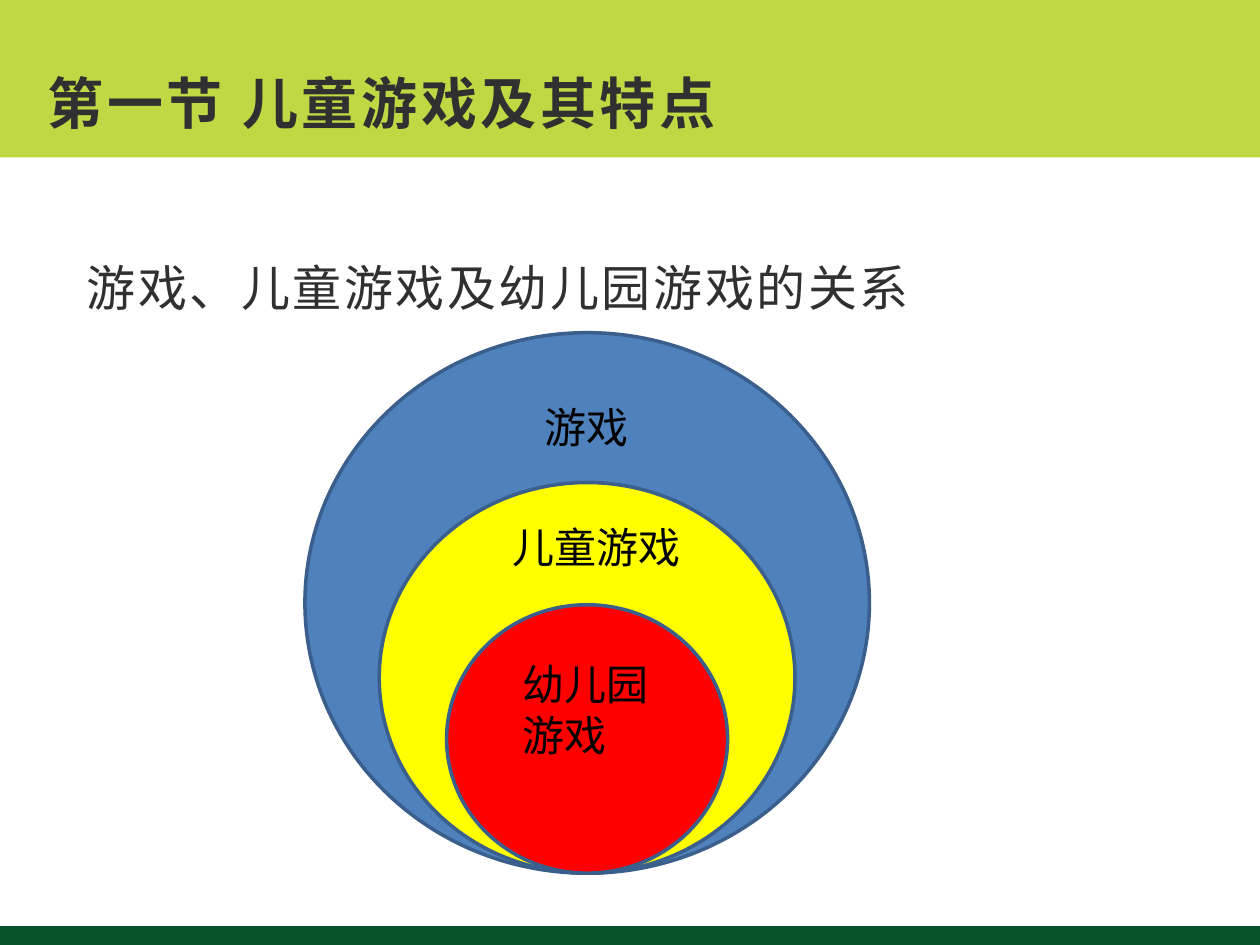
from dataclasses import dataclass, field

from lxml.etree import SubElement
from pptx import Presentation
from pptx.dml.color import RGBColor
from pptx.enum.shapes import MSO_SHAPE
from pptx.enum.text import MSO_ANCHOR, PP_ALIGN
from pptx.oxml.ns import qn
from pptx.util import Inches, Pt

WIDTH, HEIGHT = 10, 7.5
CJK_FONT = "Noto Sans CJK SC"
CENTER_X, BASE_Y = 4.66, 6.93  # the ellipses share an axis and a lowest point


@dataclass
class Text:
    words: str
    box: tuple[float, float, float, float]
    size: float = 24
    color: str = "000000"
    font: str = "Arial"
    bold: bool = False
    tracking: float = 0
    anchor: MSO_ANCHOR = MSO_ANCHOR.TOP
    paragraph: dict = field(default_factory=dict)


@dataclass
class Ring:
    width: float
    height: float
    fill: str
    label: Text


TITLE = Text("第一节 儿童游戏及其特点", (0.28, 0.36, 9.07, 0.77), 32, "303030",
             bold=True, tracking=2, anchor=MSO_ANCHOR.BOTTOM)
BODY = Text("游戏、儿童游戏及幼儿园游戏的关系", (0.59, 1.76, 8.86, 5.18), 28, "303030",
            CJK_FONT, tracking=1.5,
            paragraph={"line_spacing": 1.5, "space_after": Pt(10)})
RINGS = [
    Ring(4.48, 4.29, "4F81BD", Text("游戏", (3.54, 3.14, 2.23, 0.5),
                                    paragraph={"alignment": PP_ALIGN.CENTER})),
    Ring(3.3, 3.1, "FFFF00", Text("儿童游戏", (3.97, 4.09, 1.8, 0.5))),
    Ring(2.23, 2.13, "FF0000", Text("幼儿园游戏", (4.05, 5.18, 1.22, 0.91))),
]


def rgb(color: str) -> RGBColor:
    return RGBColor.from_string(color)


def add_filled(slide, kind: MSO_SHAPE, box: tuple, fill: str):
    sp = slide.shapes.add_shape(kind, *map(Inches, box))
    sp.shadow.inherit = False
    sp.fill.solid()
    sp.fill.fore_color.rgb = rgb(fill)
    sp.line.fill.background()
    return sp


def add_text(slide, text: Text) -> None:
    tf = slide.shapes.add_textbox(*map(Inches, text.box)).text_frame
    tf.word_wrap = True
    tf.vertical_anchor = text.anchor
    p = tf.paragraphs[0]
    for name, value in text.paragraph.items():
        setattr(p, name, value)
    r = p.add_run()
    r.text = text.words
    for name, value in {"size": Pt(text.size), "bold": text.bold, "name": text.font}.items():
        setattr(r.font, name, value)
    r.font.color.rgb = rgb(text.color)
    props = r._r.get_or_add_rPr()
    props.set("lang", "zh-CN")
    props.set("spc", str(round(text.tracking * 100)))
    SubElement(props, qn("a:ea")).set("typeface", CJK_FONT)


def add_ring(slide, ring: Ring) -> None:
    box = (CENTER_X - ring.width / 2, BASE_Y - ring.height, ring.width, ring.height)
    sp = add_filled(slide, MSO_SHAPE.OVAL, box, ring.fill)
    sp.line.color.rgb = rgb("3A5F8C")
    sp.line.width = Pt(2)
    add_text(slide, ring.label)


def main() -> None:
    prs = Presentation()
    prs.slide_width, prs.slide_height = Inches(WIDTH), Inches(HEIGHT)
    s = prs.slides.add_slide(prs.slide_layouts[6])
    add_filled(s, MSO_SHAPE.RECTANGLE, (0, 0, WIDTH, HEIGHT / 6), "BFD844")
    add_filled(s, MSO_SHAPE.RECTANGLE, (0, HEIGHT * 0.98, WIDTH, HEIGHT * 0.02), "09532A")
    add_text(s, TITLE)
    add_text(s, BODY)
    for ring in RINGS:
        add_ring(s, ring)
    prs.save("out.pptx")


if __name__ == "__main__":
    main()
